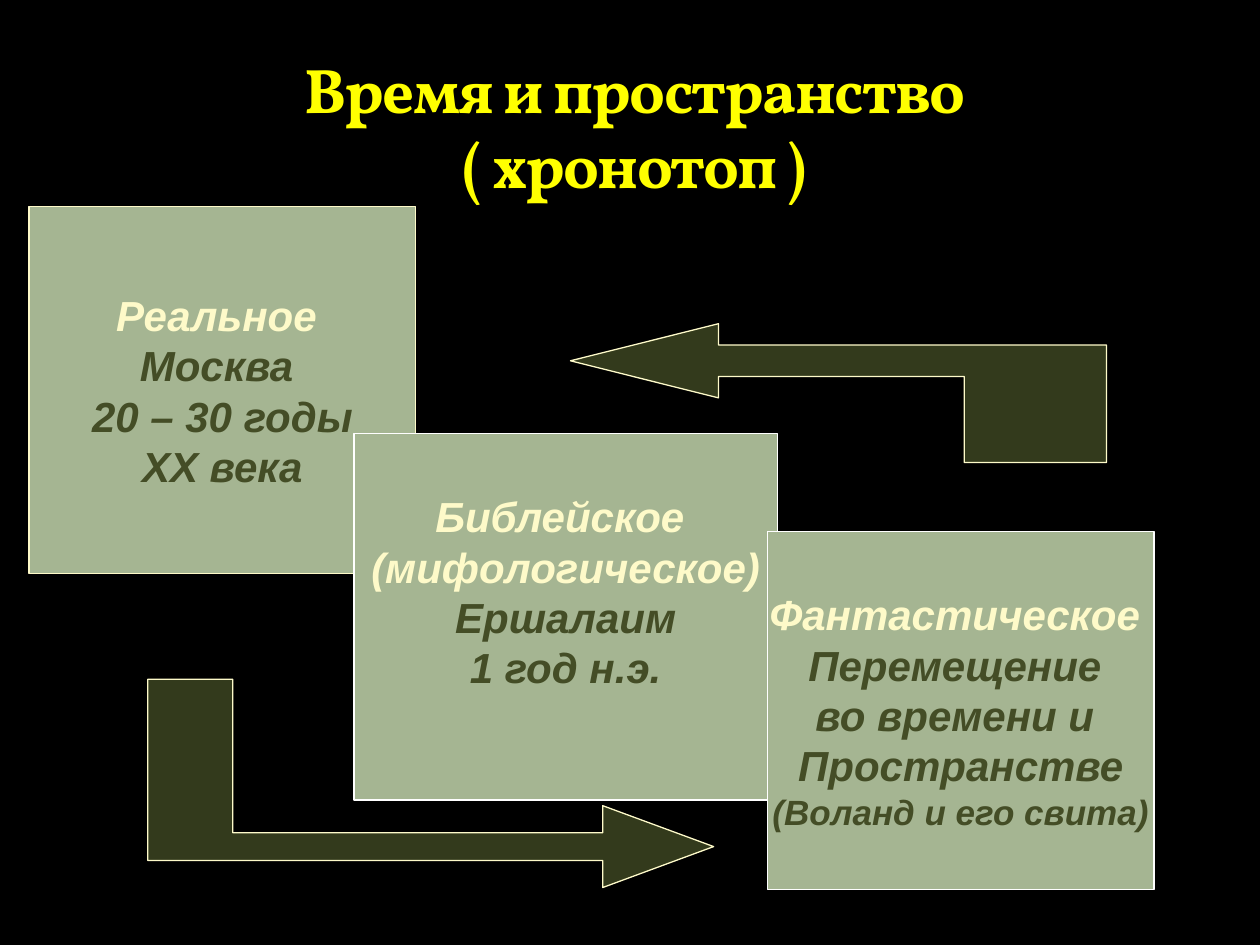
from dataclasses import dataclass

import pptx
import pptx.dml.color
import pptx.enum.shapes
import pptx.enum.text
import pptx.util

Pt = pptx.util.Pt
COLORS = {
    "background": "000000",
    "title": "FFFF00",
    "box": "A5B592",
    "arrow": "333A1C",
    "cream": "FEFAC9",
    "white": "FFFFFF",
    "dark": "444D26",
}
TITLE_FORMAT = {"name": "Vollkorn", "size": Pt(36), "bold": True}
BOX_FORMAT = {"name": "Arial", "bold": True, "italic": True}


@dataclass
class Line:
    text: str
    color: str = "dark"
    size: float = 24


@dataclass
class Box:
    left: float
    top: float
    width: float
    height: float
    border: str
    lines: list[Line]
    bottom_inset: float = 3.6


@dataclass
class BentArrow:
    """A horizontal arrow whose tail turns to a vertical stem."""
    tip_x: float
    axis_y: float
    head_x: float
    head_half: float
    shaft_half: float
    stem_inner_x: float
    stem_outer_x: float
    stem_end_y: float


BOXES = [
    Box(16.6, 118.1, 221, 209.5, "cream", [
        Line("Реальное ", "cream"), Line("Москва "),
        Line("20 – 30 годы"), Line("ХХ века")]),
    Box(202.3, 247.7, 241.9, 209.5, "white", [
        Line("Библейское ", "cream"), Line("(мифологическое)", "cream"),
        Line("Ершалаим"), Line("1 год н.э.")], bottom_inset=32.4),
    Box(438.5, 303.8, 221, 204.5, "white", [
        Line("Фантастическое ", "cream"), Line("Перемещение "),
        Line("во времени и "), Line("Пространстве"),
        Line("(Воланд и его свита)", size=20)]),
]
ARROWS = [
    BentArrow(407.8, 483.8, 344.4, 23.4, 7.9, 133, 84.4, 388.2),
    BentArrow(326, 206.2, 410.6, 21.2, 9, 551, 632.3, 264.3),
]


def rgb(name: str) -> pptx.dml.color.RGBColor:
    return pptx.dml.color.RGBColor.from_string(COLORS[name])


def format_font(font, values: dict, color: str) -> None:
    for name, value in values.items():
        setattr(font, name, value)
    font.color.rgb = rgb(color)


def style_shape(shape, fill: str, border: str) -> None:
    shape.shadow.inherit = False
    shape.fill.solid()
    shape.fill.fore_color.rgb = rgb(fill)
    shape.line.color.rgb = rgb(border)
    shape.line.width = Pt(0.75)


def add_title(slide, text: str) -> None:
    title = slide.shapes.title
    place = {"left": 28.1, "top": 22.3, "width": 669.6, "height": 96.5}
    for name, value in place.items():
        setattr(title, name, Pt(value))
    frame = title.text_frame
    frame.text = text
    frame.auto_size = pptx.enum.text.MSO_AUTO_SIZE.NONE
    frame.vertical_anchor = pptx.enum.text.MSO_ANCHOR.BOTTOM
    paragraph = frame.paragraphs[0]
    paragraph.alignment = pptx.enum.text.PP_ALIGN.CENTER
    for run in paragraph.runs:
        format_font(run.font, TITLE_FORMAT, "title")
        run.font._element.set("spc", "-100")


def add_box(slide, box: Box) -> None:
    shape = slide.shapes.add_shape(
        pptx.enum.shapes.MSO_SHAPE.RECTANGLE,
        Pt(box.left), Pt(box.top), Pt(box.width), Pt(box.height))
    style_shape(shape, "box", box.border)
    frame = shape.text_frame
    frame.word_wrap = False
    frame.vertical_anchor = pptx.enum.text.MSO_ANCHOR.MIDDLE
    frame.margin_bottom = Pt(box.bottom_inset)
    for index, line in enumerate(box.lines):
        paragraph = frame.add_paragraph() if index else frame.paragraphs[0]
        paragraph.alignment = pptx.enum.text.PP_ALIGN.CENTER
        run = paragraph.add_run()
        run.text = line.text
        format_font(run.font, {**BOX_FORMAT, "size": Pt(line.size)}, line.color)


def add_bent_arrow(slide, arrow: BentArrow) -> None:
    side = 1 if arrow.stem_end_y > arrow.axis_y else -1
    inner_y = arrow.axis_y + side * arrow.shaft_half
    outer_y = arrow.axis_y - side * arrow.shaft_half
    points = [
        (arrow.head_x, arrow.axis_y + side * arrow.head_half),
        (arrow.head_x, inner_y),
        (arrow.stem_inner_x, inner_y),
        (arrow.stem_inner_x, arrow.stem_end_y),
        (arrow.stem_outer_x, arrow.stem_end_y),
        (arrow.stem_outer_x, outer_y),
        (arrow.head_x, outer_y),
        (arrow.head_x, arrow.axis_y - side * arrow.head_half),
    ]
    builder = slide.shapes.build_freeform(
        Pt(arrow.tip_x), Pt(arrow.axis_y))
    builder.add_line_segments([(Pt(x), Pt(y)) for x, y in points], close=True)
    style_shape(builder.convert_to_shape(), "arrow", "cream")


def main() -> None:
    presentation = pptx.Presentation()
    presentation.slide_width = Pt(720)
    presentation.slide_height = Pt(540)
    slide = presentation.slides.add_slide(presentation.slide_layouts[5])
    slide.background.fill.solid()
    slide.background.fill.fore_color.rgb = rgb("background")
    add_title(slide, "Время и пространство\v( хронотоп )")
    for box in BOXES:
        add_box(slide, box)
    for arrow in ARROWS:
        add_bent_arrow(slide, arrow)
    presentation.save("out.pptx")


if __name__ == "__main__":
    main()
